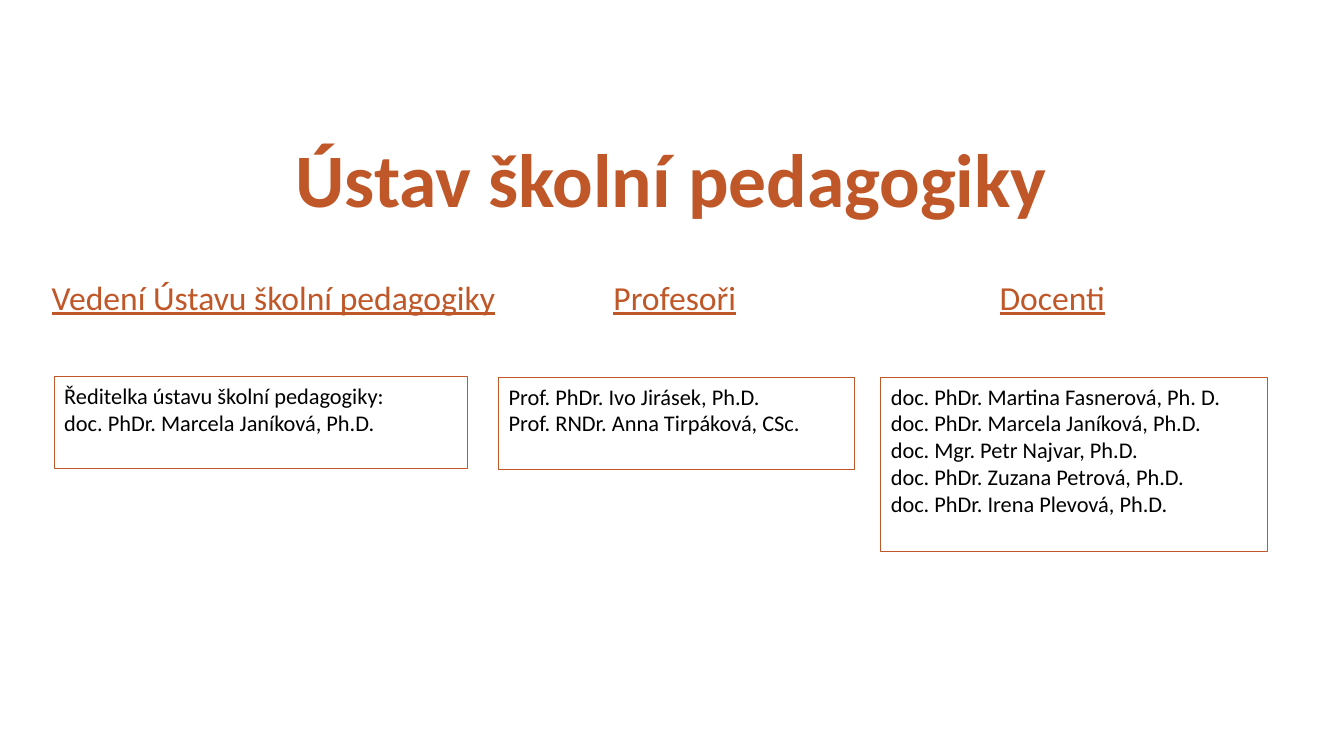
from dataclasses import dataclass

from pptx import Presentation
from pptx.dml.color import RGBColor
from pptx.enum.shapes import MSO_SHAPE
from pptx.enum.text import MSO_ANCHOR, PP_ALIGN
from pptx.util import Cm, Pt


@dataclass(frozen=True)
class Theme:
    font: str = "Calibri"
    accent: RGBColor = RGBColor(0xC0, 0x57, 0x28)
    ink: RGBColor = RGBColor(0, 0, 0)
    title_size: int = 54
    heading_size: int = 24
    body_size: int = 16
    border: float = 0.75
    display_spacing: float = 0.9


@dataclass(frozen=True)
class Box:
    left: float
    top: float
    width: float
    height: float

    def lengths(self):
        return Cm(self.left), Cm(self.top), Cm(self.width), Cm(self.height)


@dataclass(frozen=True)
class Group:
    heading: str
    heading_box: Box
    align: PP_ALIGN
    members: tuple
    members_box: Box


THEME = Theme()
TITLE_BOX = Box(4.22, 3.45, 25.4, 2.64)
GROUPS = (
    Group("Vedení Ústavu školní pedagogiky", Box(0.99, 6.96, 11.81, 1.32), PP_ALIGN.CENTER,
          ("Ředitelka ústavu školní pedagogiky:",
           "doc. PhDr. Marcela Janíková, Ph.D."),
          Box(1.37, 9.5, 10.41, 2.31)),
    Group("Profesoři", Box(15.21, 6.96, 9.5, 1.1), PP_ALIGN.LEFT,
          ("Prof. PhDr. Ivo Jirásek, Ph.D.",
           "Prof. RNDr. Anna Tirpáková, CSc."),
          Box(12.57, 9.52, 8.97, 2.31)),
    Group("Docenti", Box(24.94, 6.96, 8.9, 1.1), PP_ALIGN.LEFT,
          ("doc. PhDr. Martina Fasnerová, Ph. D.",
           "doc. PhDr. Marcela Janíková, Ph.D.",
           "doc. Mgr. Petr Najvar, Ph.D.",
           "doc. PhDr. Zuzana Petrová, Ph.D.",
           "doc. PhDr. Irena Plevová, Ph.D."),
          Box(22.2, 9.52, 9.75, 4.37)),
)


def write(frame, lines, size, color, align=PP_ALIGN.LEFT, spacing=1.0, bold=False, underline=False):
    """Fill a text frame from the top, one paragraph per line, in one style."""
    frame.word_wrap = True
    frame.vertical_anchor = MSO_ANCHOR.TOP
    frame.text = "\n".join(lines)
    for para in frame.paragraphs:
        para.alignment = align
        para.line_spacing = spacing
        for span in para.runs:
            span.font.name = THEME.font
            span.font.size = Pt(size)
            span.font.color.rgb = color
            span.font.bold = bold
            span.font.underline = underline


def add_title(page, box, text):
    label = page.shapes.add_textbox(*box.lengths())
    write(label.text_frame, [text], THEME.title_size, THEME.accent,
          PP_ALIGN.CENTER, THEME.display_spacing, bold=True)


def add_heading(page, box, text, align):
    label = page.shapes.add_textbox(*box.lengths())
    write(label.text_frame, [text], THEME.heading_size, THEME.accent,
          align, THEME.display_spacing, underline=True)


def add_members(page, box, members):
    panel = page.shapes.add_shape(MSO_SHAPE.RECTANGLE, *box.lengths())
    panel.shadow.inherit = False
    panel.fill.background()
    panel.line.color.rgb = THEME.accent
    panel.line.width = Pt(THEME.border)
    write(panel.text_frame, members, THEME.body_size, THEME.ink)


def main():
    deck = Presentation()
    deck.slide_width, deck.slide_height = Cm(33.87), Cm(19.05)
    page = deck.slides.add_slide(deck.slide_layouts[6])
    add_title(page, TITLE_BOX, "Ústav školní pedagogiky")
    for group in GROUPS:
        add_heading(page, group.heading_box, group.heading, group.align)
        add_members(page, group.members_box, group.members)
    deck.save("out.pptx")


if __name__ == "__main__":
    main()
